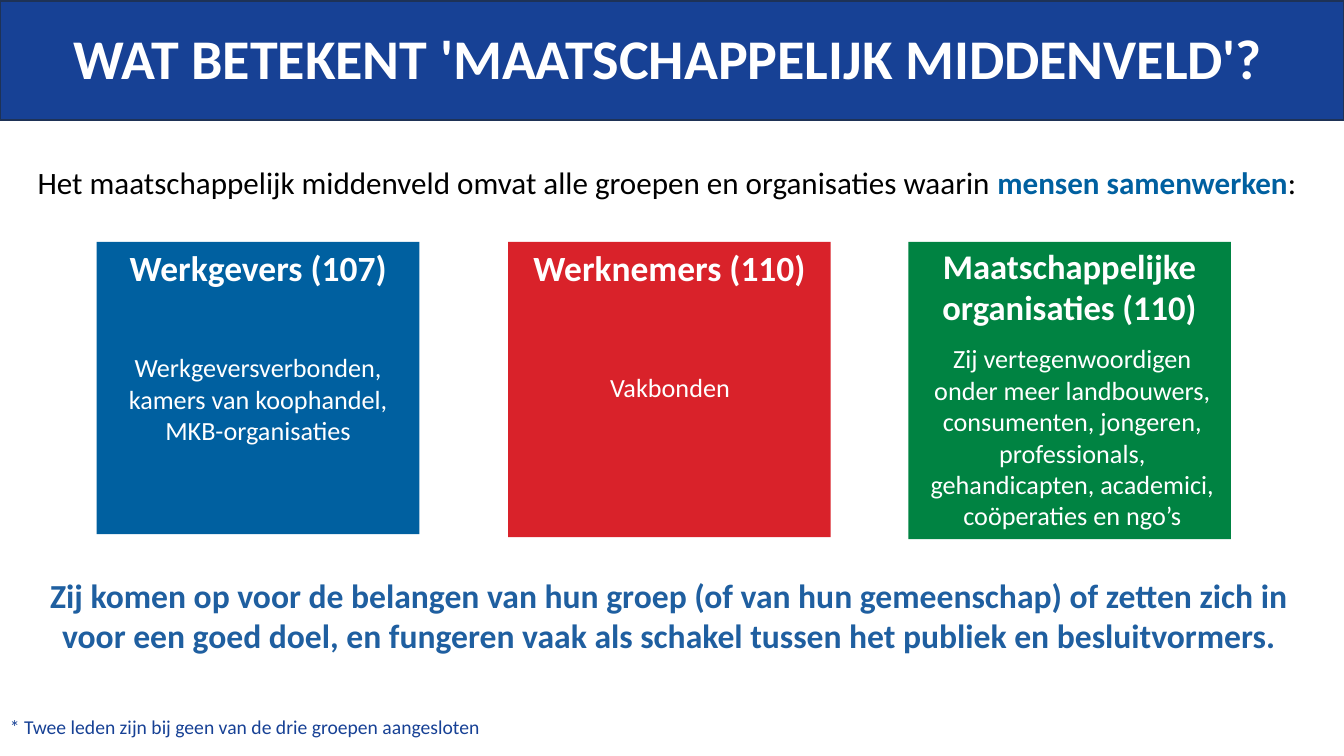
from dataclasses import dataclass

from pptx import Presentation
from pptx import util as u
from pptx.dml import color
from pptx.enum import shapes, text

BLUE, RED, GREEN = "0060A0", "D9222A", "008342"
NAVY, WHITE, BLACK = "174195", "FFFFFF", "000000"
MID, LEFT = text.PP_ALIGN.CENTER, text.PP_ALIGN.LEFT


@dataclass
class Box:
    left: float
    top: float
    width: float
    height: float

    def sides(self) -> list:
        return [u.Inches(n) for n in (self.left, self.top, self.width, self.height)]


@dataclass
class Run:
    words: str
    size: float
    tint: str = WHITE
    bold: bool = False


@dataclass
class Group:
    fill: str
    area: Box
    title: Run
    head: Box
    lines: list[str]
    body: Box


def rgb(code: str) -> color.RGBColor:
    return color.RGBColor.from_string(code)


def apply(thing, form: dict) -> None:
    for name, value in form.items():
        setattr(thing, name, value)


def panel(slide, box: Box, fill: str, edge: str | None = None) -> None:
    shape = slide.shapes.add_shape(shapes.MSO_SHAPE.RECTANGLE, *box.sides())
    shape.shadow.inherit = False
    shape.fill.solid()
    shape.fill.fore_color.rgb = rgb(fill)
    if edge:
        shape.line.color.rgb = rgb(edge)
        shape.line.width = u.Pt(1)
    else:
        shape.line.fill.background()


def write(slide, box: Box, lines: list[list[Run]], para: dict | None = None,
          frame: dict | None = None) -> None:
    area = slide.shapes.add_textbox(*box.sides()).text_frame
    apply(area, {"word_wrap": True, **(frame or {})})
    for i, line in enumerate(lines):
        item = area.add_paragraph() if i else area.paragraphs[0]
        apply(item, {"alignment": MID, **(para or {})})
        for run in line:
            part = item.add_run()
            part.text = run.words
            apply(part.font, {"name": "Calibri", "size": u.Pt(run.size), "bold": run.bold})
            part.font.color.rgb = rgb(run.tint)


WIDE = 3.2
GROW = {"auto_size": text.MSO_AUTO_SIZE.SHAPE_TO_FIT_TEXT}
PAD = {"margin_left": u.Inches(0.13), "margin_right": u.Inches(0.13),
       "margin_top": u.Inches(0.07), "margin_bottom": u.Inches(0.07)}

GROUPS = [
    Group(BLUE, Box(0.96, 2.4, WIDE, 2.9),
          Run("Werkgevers (107)", 25.3, bold=True), Box(0.96, 2.39, WIDE, 0.54),
          ["Werkgeversverbonden,", "kamers van koophandel,", "MKB-organisaties"],
          Box(0.96, 3.44, WIDE, 1.36)),
    Group(RED, Box(5.04, 2.4, WIDE, 2.93),
          Run("Werknemers (110)", 25.3, bold=True), Box(5.04, 2.39, WIDE, 0.54),
          ["Vakbonden"], Box(5.05, 3.63, 3.19, 0.42)),
    Group(GREEN, Box(9.01, 2.4, WIDE, 2.95),
          Run("Maatschappelijke organisaties (110)", 24.7, bold=True),
          Box(9.01, 2.38, WIDE, 0.86),
          ["Zij vertegenwoordigen onder meer landbouwers, consumenten, jongeren, "
           "professionals, gehandicapten, academici, coöperaties en ngo’s"],
          Box(9.06, 3.35, 3.15, 1.89)),
]


def main() -> None:
    deck = Presentation()
    apply(deck, {"slide_width": u.Inches(13.33), "slide_height": u.Inches(7.5)})
    slide = deck.slides.add_slide(deck.slide_layouts[6])

    # Opening sentence
    write(slide, Box(-0.05, 1.61, 13.33, 0.57), [[
        Run("Het maatschappelijk middenveld omvat alle groepen en organisaties waarin ",
            22.2, BLACK),
        Run("mensen samenwerken", 22.2, BLUE, True),
        Run(":", 22.2, BLACK),
    ]], {"line_spacing": 0.9, "space_before": u.Pt(5)})

    # The three groups
    for group in GROUPS:
        panel(slide, group.area, group.fill)
        write(slide, group.head, [[group.title]])
        write(slide, group.body, [[Run(line, 18.7)] for line in group.lines], frame=GROW)

    # Closing statement
    write(slide, Box(0.35, 5.63, 12.57, 1.17), [[
        Run("Zij komen op voor de belangen van hun groep (of van hun gemeenschap) of "
            "zetten zich in voor een goed doel, en fungeren vaak als schakel tussen het "
            "publiek en besluitvormers.", 24, "1F5FA0", True),
    ]], frame=PAD)

    # Title band
    panel(slide, Box(0, 0.01, 13.33, 1.18), NAVY, "1E3256")
    write(slide, Box(-0.09, 0.18, 13.43, 1.17),
          [[Run("WAT BETEKENT 'MAATSCHAPPELIJK MIDDENVELD'?", 40, bold=True)]])

    # Footnote
    write(slide, Box(0, 7.04, 9.34, 0.34),
          [[Run("* Twee leden zijn bij geen van de drie groepen aangesloten", 14, NAVY)]],
          {"alignment": LEFT}, GROW)

    deck.save("out.pptx")


if __name__ == "__main__":
    main()
